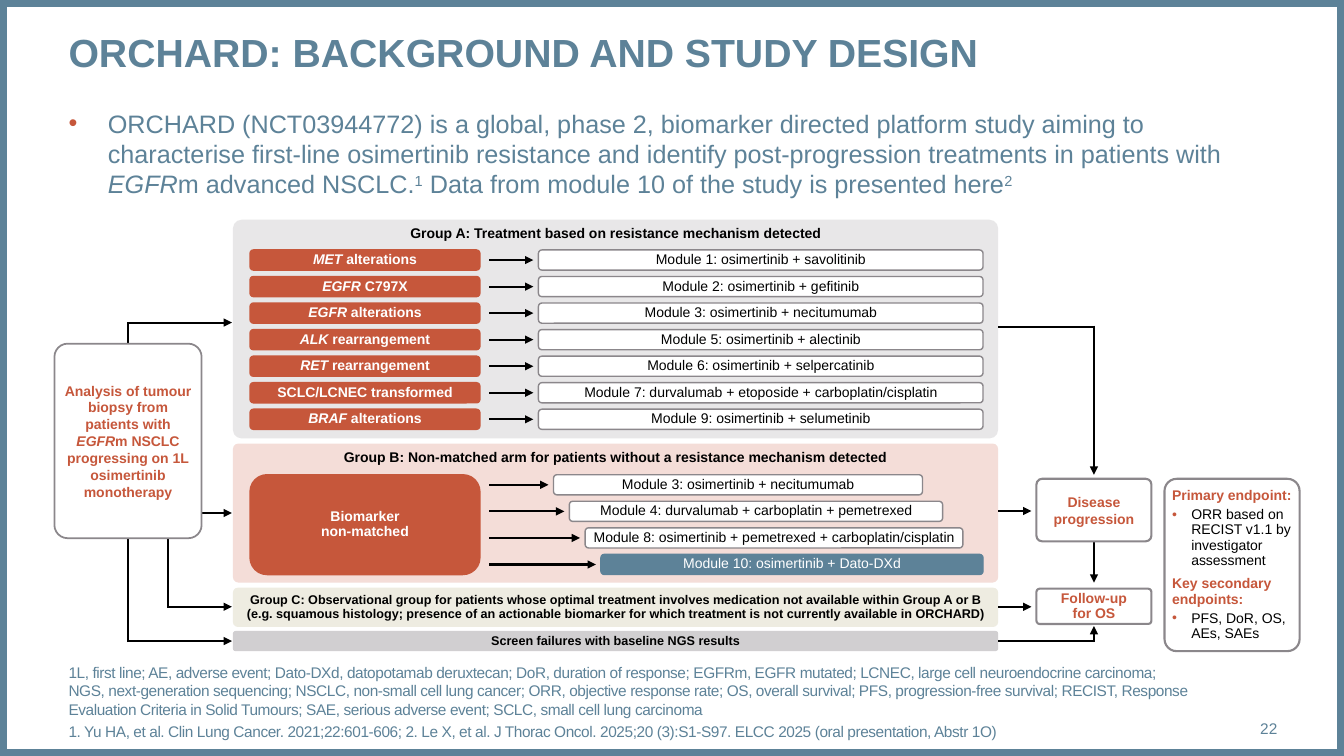
"""Build the ORCHARD background and study design slide."""
import copy

import lxml.etree
import pptx
import pptx.dml.color
import pptx.enum.shapes
import pptx.enum.text
import pptx.oxml.ns
import pptx.util

Inches = pptx.util.Inches
Pt = pptx.util.Pt
RGBColor = pptx.dml.color.RGBColor
MSO_SHAPE = pptx.enum.shapes.MSO_SHAPE
ANCHOR = pptx.enum.text.MSO_ANCHOR
ALIGN = pptx.enum.text.PP_ALIGN
qn = pptx.oxml.ns.qn

BLUE = RGBColor(0x5D, 0x82, 0x98)
RUST = RGBColor(0xC6, 0x57, 0x3B)
GREY = RGBColor(0x8B, 0x87, 0x8B)
PALE_GREY = RGBColor(0xE8, 0xE7, 0xE8)
MID_GREY = RGBColor(0xD1, 0xCF, 0xD1)
PINK = RGBColor(0xF4, 0xDD, 0xD8)
CREAM = RGBColor(0xEE, 0xEC, 0xE1)
BLACK = RGBColor(0, 0, 0)
WHITE = RGBColor(0xFF, 0xFF, 0xFF)


def write(tf, text, size=10, color=BLACK, bold=False, align=ALIGN.CENTER,
          spacing=None, before=0, after=0, bullet=0, tracking=0):
    """Add a paragraph; *...* is italic, ^...^ is superscript, a newline is a break."""
    p = tf.add_paragraph() if tf.text else tf.paragraphs[0]
    if bullet:
        pPr = p._p.get_or_add_pPr()
        pPr.set("marL", str(Inches(bullet)))
        pPr.set("indent", str(-Inches(bullet)))
        clr = lxml.etree.SubElement(pPr, qn("a:buClr"))
        lxml.etree.SubElement(clr, qn("a:srgbClr")).set("val", str(RUST))
        lxml.etree.SubElement(pPr, qn("a:buFont")).set("typeface", "Arial")
        lxml.etree.SubElement(pPr, qn("a:buChar")).set("char", "•")
    p.alignment = align
    p.line_spacing = spacing
    p.space_before, p.space_after = Pt(before), Pt(after)
    for i, part in enumerate(text.split("*")):
        for j, piece in enumerate(part.split("^")):
            for k, line in enumerate(piece.split("\n")):
                if k:
                    p.add_line_break()
                    p._p[-1].append(copy.deepcopy(r._r.rPr))
                if not line:
                    continue
                r = p.add_run()
                r.text = line
                r.font.name, r.font.size = "Arial", Pt(size)
                r.font.bold, r.font.italic = bold, i % 2 == 1
                r.font.color.rgb = color
                if j % 2:
                    r._r.rPr.set("baseline", "30000")
                if tracking:
                    r._r.rPr.set("spc", str(round(tracking * 100)))


def box(left, top, width, height, fill=None, line=None, weight=1.0, round_by=0.17,
        inset=(0, 0), anchor=ANCHOR.MIDDLE, wrap=True):
    """Add a rounded box, or a plain text box when there is no fill."""
    place = [Inches(v) for v in (left, top, width, height)]
    if fill is None:
        sp = s.shapes.add_textbox(*place)
    else:
        sp = s.shapes.add_shape(MSO_SHAPE.ROUNDED_RECTANGLE, *place)
        sp.shadow.inherit = False
        sp.adjustments[0] = round_by
        sp.fill.solid()
        sp.fill.fore_color.rgb = fill
        if line is None:
            sp.line.fill.background()
        else:
            sp.line.color.rgb, sp.line.width = line, Pt(weight)
    tf = sp.text_frame
    tf.word_wrap, tf.vertical_anchor = wrap, anchor
    tf.margin_left = tf.margin_right = Inches(inset[0])
    tf.margin_top = tf.margin_bottom = Inches(inset[1])
    return tf


prs = pptx.Presentation()
prs.slide_width, prs.slide_height = Inches(13.33), Inches(7.5)
s = prs.slides.add_slide(prs.slide_layouts[5])

frame = s.shapes.add_shape(MSO_SHAPE.RECTANGLE, 0, 0, prs.slide_width, prs.slide_height)
frame.shadow.inherit = False
frame.fill.background()
frame.line.color.rgb, frame.line.width = BLUE, Pt(10)

title = s.shapes.title
title.left, title.top, title.width, title.height = [Inches(v) for v in (0.68, 0.28, 11.99, 0.94)]
tf = title.text_frame
tf.margin_left = tf.margin_top = tf.margin_right = tf.margin_bottom = 0
tf.vertical_anchor = ANCHOR.TOP
tf.auto_size = pptx.enum.text.MSO_AUTO_SIZE.NONE
write(tf, "ORCHARD: BACKGROUND AND STUDY DESIGN", size=28, color=BLUE, bold=True, align=ALIGN.LEFT)

write(box(0.68, 1.07, 11.99, 1.05, anchor=ANCHOR.TOP),
      "ORCHARD (NCT03944772) is a global, phase 2, biomarker directed platform study aiming to "
      "characterise first-line osimertinib resistance and identify post-progression treatments in "
      "patients with *EGFR*m advanced NSCLC.^1^ Data from module 10 of the study is presented here^2^",
      size=18, color=BLUE, align=ALIGN.LEFT, bullet=0.39)

tf = box(0.68, 6.95, 11.13, 0.4, anchor=ANCHOR.BOTTOM)
write(tf, "1L, first line; AE, adverse event; Dato-DXd, datopotamab deruxtecan; DoR, duration of response; "
      "EGFRm, EGFR mutated; LCNEC, large cell neuroendocrine carcinoma; NGS, next-generation sequencing; "
      "NSCLC, non-small cell lung cancer; ORR, objective response rate; OS, overall survival; "
      "PFS, progression-free survival; RECIST, Response Evaluation Criteria in Solid Tumours; "
      "SAE, serious adverse event; SCLC, small cell lung carcinoma",
      size=11, color=BLUE, align=ALIGN.LEFT, tracking=-0.3)
write(tf, "1. Yu HA, et al. Clin Lung Cancer. 2021;22:601-606; 2. Le X, et al. J Thorac Oncol. "
      "2025;20 (3):S1-S97. ELCC 2025 (oral presentation, Abstr 1O)",
      size=11, color=BLUE, align=ALIGN.LEFT, before=3, tracking=-0.3)
write(box(11.81, 7.03, 0.86, 0.4), "22", size=11, color=BLUE, align=ALIGN.RIGHT)

PANEL_LEFT, PANEL_WIDTH = 2.31, 7.59
PANEL_RIGHT = PANEL_LEFT + PANEL_WIDTH
panels = [
    (2.18, 2.17, PALE_GREY, 0.04, ""),
    (4.4, 1.38, PINK, 0.04, ""),
    (5.83, 0.39, CREAM, 0.13,
     "Group C: Observational group for patients whose optimal treatment involves medication not "
     "available within Group A or B\n(e.g. squamous histology; presence of an actionable biomarker "
     "for which treatment is not currently available in ORCHARD)"),
    (6.26, 0.2, MID_GREY, 0.13, "Screen failures with baseline NGS results"),
]
for top, height, fill, round_by, text in panels:
    tf = box(PANEL_LEFT, top, PANEL_WIDTH, height, fill, round_by=round_by, inset=(0.1, 0.05))
    write(tf, text, size=9, bold=True, spacing=0.9)

headings = [
    (3.94, 2.18, 4.33, "Group A: Treatment based on resistance mechanism detected"),
    (3.28, 4.4, 5.64, "Group B: Non-matched arm for patients without a resistance mechanism detected"),
]
for left, top, width, text in headings:
    tf = box(left, top, width, 0.27, inset=(0.1, 0.05), anchor=ANCHOR.TOP, wrap=False)
    write(tf, text, bold=True)

lines = [
    (1.27, 6.37, 1.27, 3.19, False),
    (1.27, 3.2, 2.3, 3.2, True),
    (1.27, 5.09, 2.3, 5.09, True),
    (1.67, 4.75, 1.67, 6.03, False),
    (1.66, 6.02, 2.3, 6.02, True),
    (1.27, 6.36, 2.3, 6.36, True),
    (PANEL_RIGHT, 3.24, 10.85, 3.24, False),
    (10.85, 3.23, 10.85, 4.71, True),
    (PANEL_RIGHT, 5.07, 10.23, 5.07, True),
    (10.85, 5.17, 10.85, 5.78, True),
    (PANEL_RIGHT, 6.02, 10.23, 6.02, True),
    (PANEL_RIGHT, 6.36, 10.86, 6.36, False),
    (10.85, 6.37, 10.85, 6.21, True),
]

ROW_STEP, ROW_HEIGHT = 1.58 / 6, 0.2
group_a = [
    ("*MET* alterations", "Module 1: osimertinib + savolitinib"),
    ("*EGFR* C797X", "Module 2: osimertinib + gefitinib"),
    ("*EGFR* alterations", "Module 3: osimertinib + necitumumab"),
    ("*ALK* rearrangement", "Module 5: osimertinib + alectinib"),
    ("*RET* rearrangement", "Module 6: osimertinib + selpercatinib"),
    ("SCLC/LCNEC transformed", "Module 7: durvalumab + etoposide + carboplatin/cisplatin"),
    ("*BRAF* alterations", "Module 9: osimertinib + selumetinib"),
]
for i, (marker, module) in enumerate(group_a):
    top = 2.48 + i * ROW_STEP
    write(box(2.48, top, 2.28, ROW_HEIGHT, RUST, RUST), marker, color=WHITE, bold=True, spacing=0.9)
    write(box(5.34, top, 4.41, ROW_HEIGHT, WHITE, GREY), module, spacing=0.9)
    lines.append((4.85, top + 0.1, 5.29, top + 0.1, True))

tf = box(2.48, 4.71, 2.28, 0.99, RUST, RUST)
for text in ("Biomarker", "non-matched"):
    write(tf, text, color=WHITE, bold=True, spacing=0.9)
group_b = [
    ("Module 3: osimertinib + necitumumab", WHITE, GREY, BLACK),
    ("Module 4: durvalumab + carboplatin + pemetrexed", WHITE, GREY, BLACK),
    ("Module 8: osimertinib + pemetrexed + carboplatin/cisplatin", WHITE, GREY, BLACK),
    ("Module 10: osimertinib + Dato-DXd", BLUE, BLUE, WHITE),
]
for i, (module, fill, line, color) in enumerate(group_b):
    left, top = 5.49 + i * 0.47 / 3, 4.71 + i * ROW_STEP
    tf = box(left, top, 3.66 + i * 0.13 / 3, ROW_HEIGHT, fill, line)
    write(tf, module, color=color, spacing=0.9)
    lines.append((4.85, top + 0.1, left - 0.05, top + 0.1, True))

for x1, y1, x2, y2, arrow in lines:
    cn = s.shapes.add_connector(pptx.enum.shapes.MSO_CONNECTOR.STRAIGHT,
                                Inches(x1), Inches(y1), Inches(x2), Inches(y2))
    cn.line.color.rgb, cn.line.width = BLACK, Pt(1.5)
    if arrow:
        lxml.etree.SubElement(cn.line._get_or_add_ln(), qn("a:tailEnd")).set("type", "triangle")
    lxml.etree.SubElement(cn._element.spPr, qn("a:effectLst"))

steps = [
    (0.54, 3.41, 1.46, 1.93, 1.25, None,
     "Analysis of tumour\nbiopsy from\npatients with\n*EGFR*m NSCLC\nprogressing on 1L\nosimertinib\nmonotherapy"),
    (10.28, 4.75, 1.14, 0.62, 1.5, None, "Disease\nprogression"),
    (10.28, 5.84, 1.14, 0.35, 1.5, 0.9, "Follow-up\nfor OS"),
]
for left, top, width, height, weight, spacing, text in steps:
    tf = box(left, top, width, height, WHITE, GREY, weight, 0.09, inset=(0, 0.05))
    write(tf, text, color=RUST, bold=True, spacing=spacing, after=3)

tf = box(11.55, 4.75, 1.34, 1.71, WHITE, GREY, 1.5, 0.09, inset=(0.04, 0.05))
tf.margin_right = 0
endpoints = [
    ("Primary endpoint:", "ORR based on RECIST v1.1 by investigator assessment", 0, 3),
    ("Key secondary endpoints:", "PFS, DoR, OS, AEs, SAEs", 3, 0),
]
for heading, detail, before, after in endpoints:
    write(tf, heading, color=RUST, bold=True, align=ALIGN.LEFT, spacing=0.9, before=before)
    write(tf, detail, align=ALIGN.LEFT, spacing=0.9, before=3, after=after, bullet=0.19)

prs.save("out.pptx")
